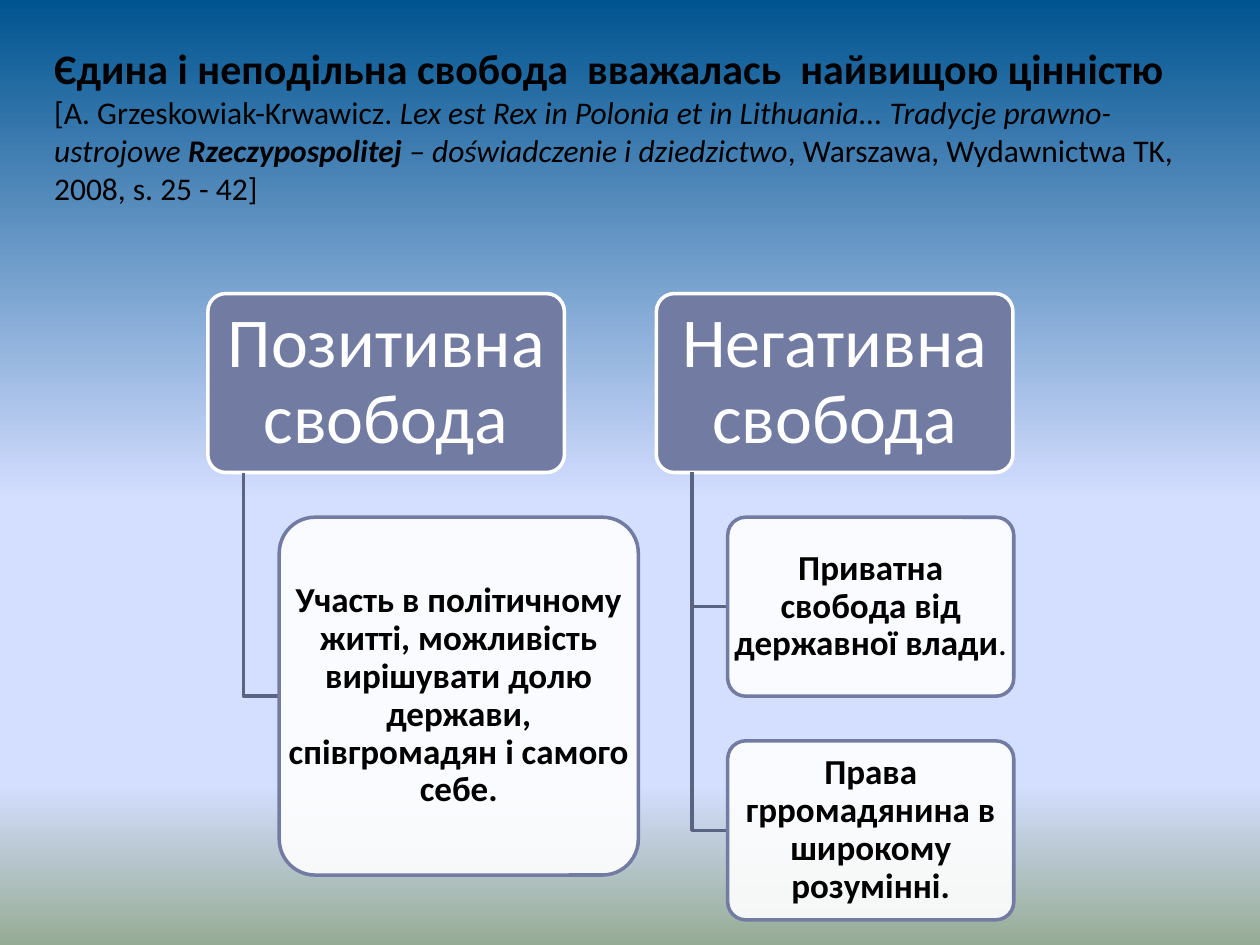
from dataclasses import dataclass
from lxml import etree
from pptx import Presentation
from pptx import util as u
from pptx.dml.color import RGBColor
from pptx.enum import shapes, text
from pptx.oxml import ns


@dataclass(frozen=True)
class Theme:
    face: str = "Calibri"
    ink: str = "000000"
    pale: str = "FFFFFF"
    head: str = "727CA3"
    link: str = "5B6383"
    sky: tuple = ((0, "005490"), (53, "D4DEFF"), (83, "D4DEFF"), (100, "96AB94"))
    lead: int = 24
    cite: int = 18
    big: int = 40
    note: int = 20
    line: int = 2


def assign(item, **vals):
    for key, val in vals.items():
        setattr(item, key, val)


def add(node, tag, **vals):
    return etree.SubElement(node, ns.qn(tag), vals)


class Deck:
    def __init__(self, theme):
        self.theme = theme
        self.prs = Presentation()
        assign(self.prs, slide_width=u.Inches(10), slide_height=u.Inches(7.5))
        self.slide = self.prs.slides.add_slide(self.prs.slide_layouts[1])
        title = self.slide.shapes.title._element
        title.getparent().remove(title)

    def sky(self):
        fill = self.slide.background.fill
        fill.gradient()
        fill.gradient_angle = 270
        stops = fill._fill._gradFill.find(ns.qn("a:gsLst"))
        for stop in list(stops):
            stops.remove(stop)
        for pos, tone in self.theme.sky:
            add(add(stops, "a:gs", pos=str(pos * 1000)), "a:srgbClr", val=tone)

    def run(self, para, words, size, tone, **style):
        run = para.add_run()
        run.text = words
        assign(run.font, name=self.theme.face, size=u.Pt(size), **style)
        run.font.color.rgb = RGBColor.from_string(tone)

    def body(self, x, y, w, h, paras):
        body = self.slide.placeholders[1]
        assign(body, left=u.Inches(x), top=u.Inches(y),
               width=u.Inches(w), height=u.Inches(h))
        frame = body.text_frame
        frame.auto_size = text.MSO_AUTO_SIZE.NONE
        for i, (size, runs) in enumerate(paras):
            para = frame.add_paragraph() if i else frame.paragraphs[0]
            props = para._p.get_or_add_pPr()
            props.set("marL", str(u.Inches(0.05)))
            props.set("indent", "0")
            add(props, "a:buNone")
            para.space_before = u.Pt(0)
            for words, style in runs:
                self.run(para, words, size, self.theme.ink, **style)

    def outline(self, shape, tone):
        shape.shadow.inherit = False
        shape.line.width = u.Pt(self.theme.line)
        shape.line.color.rgb = RGBColor.from_string(tone)

    def card(self, x, y, w, h, runs, size, fill, edge, tone, pad, alpha=100):
        card = self.slide.shapes.add_shape(
            shapes.MSO_SHAPE.ROUNDED_RECTANGLE, *map(u.Inches, (x, y, w, h)))
        card.adjustments[0] = 0.1
        card.fill.solid()
        card.fill.fore_color.rgb = RGBColor.from_string(fill)
        if alpha < 100:
            color = card._element.spPr.find(".//" + ns.qn("a:srgbClr"))
            add(color, "a:alpha", val=str(alpha * 1000))
        self.outline(card, edge)
        inset = u.Inches(pad - 0.029 * min(w, h))
        frame = card.text_frame
        assign(frame, word_wrap=True, vertical_anchor=text.MSO_ANCHOR.MIDDLE,
               margin_left=inset, margin_right=inset,
               margin_top=inset, margin_bottom=inset)
        para = frame.paragraphs[0]
        assign(para, alignment=text.PP_ALIGN.CENTER, line_spacing=0.9)
        for words, style in runs:
            self.run(para, words, size, tone, **style)

    def head(self, x, y, w, h, words):
        t = self.theme
        self.card(x, y, w, h, [(words, {})], t.big, t.head, t.pale, t.pale, 0.08)

    def note(self, x, y, w, h, runs):
        t = self.theme
        self.card(x, y, w, h, runs, t.note, t.pale, t.head, t.ink, 0.04, 90)

    def elbow(self, x, top, end, low):
        path = self.slide.shapes.build_freeform(u.Inches(x), u.Inches(top))
        path.add_line_segments(
            [(u.Inches(x), u.Inches(low)), (u.Inches(end), u.Inches(low))], close=False)
        bend = path.convert_to_shape()
        bend.fill.background()
        self.outline(bend, self.theme.link)

    def save(self):
        self.prs.save("out.pptx")


def main():
    theme = Theme()
    deck = Deck(theme)
    deck.sky()
    bold, slant = {"bold": True}, {"italic": True}
    deck.body(0.28, 0.29, 9.53, 1.65, [
        (theme.lead, [("Єдина і неподільна свобода  вважалась  найвищою цінністю", bold)]),
        (theme.cite, [
            ("[A. Grzeskowiak-Krwawicz. ", {}),
            ("Lex est Rex in Polonia et in Lithuania... Tradycje prawno-ustrojowe ", slant),
            ("Rzeczypospolitej", bold | slant),
            (" – doświadczenie i dziedzictwo", slant),
            (", Warszawa, Wydawnictwa TK, 2008, s. 25 - 42]", {}),
        ]),
    ])
    top, wide, tall, gap = 2.33, 2.83, 1.42, 0.355
    trees = [
        (1.65, "Позитивна свобода", 2.85, 2 * tall, [
            [("Участь в політичному житті, можливість вирішувати долю держави, "
              "співгромадян і самого себе.", bold)],
        ]),
        (5.21, "Негативна свобода", 2.27, tall, [
            [("Приватна свобода від державної влади", bold), (".", {})],
            [("Права грромадянина в широкому розумінні.", bold)],
        ]),
    ]
    for x, name, w, h, notes in trees:
        deck.head(x, top, wide, tall, name)
        base = top + tall
        for i, runs in enumerate(notes):
            y = base + gap + i * (h + gap)
            left = x + 0.2 * wide
            deck.elbow(x + 0.1 * wide, base, left, y + h / 2)
            deck.note(left, y, w, h, runs)
    deck.save()


if __name__ == "__main__":
    main()
